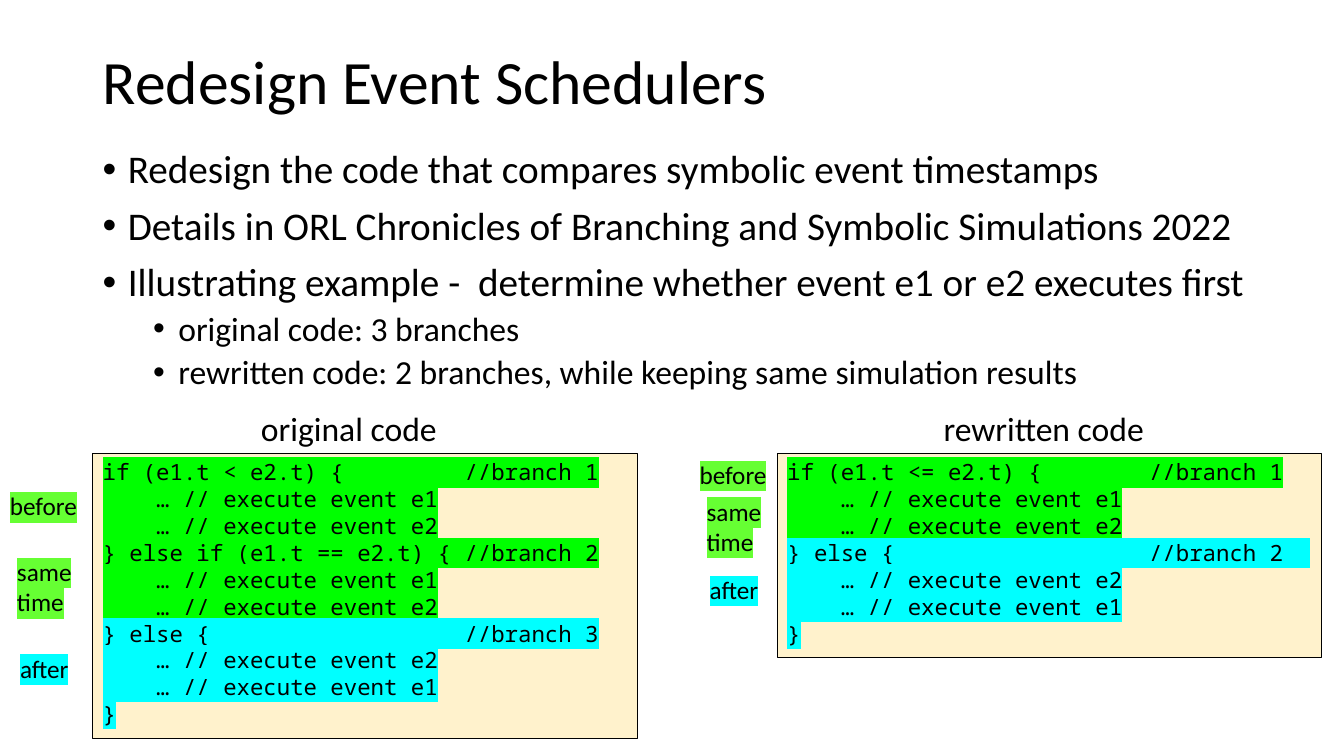
from dataclasses import dataclass

from lxml import etree
from pptx import Presentation
from pptx import util as u
from pptx.dml.color import RGBColor
from pptx.enum import shapes, text
from pptx.oxml import ns


@dataclass(frozen=True)
class Theme:
    ink: str = "000000"
    panel: str = "FFF2CC"
    green: str = "00FF00"
    lime: str = "66FF33"
    cyan: str = "00FFFF"
    sans: str = "Calibri"
    mono: str = "Noto Sans Mono"
    title: int = 44
    body: int = 28
    detail: int = 24
    label: int = 18
    code: int = 16
    outline: float = 0.75


THEME = Theme()
TITLE = "Redesign Event Schedulers"
BULLETS = [
    (0, "Redesign the code that compares symbolic event timestamps"),
    (0, "Details in ORL Chronicles of Branching and Symbolic Simulations 2022"),
    (0, "Illustrating example -  determine whether event e1 or e2 executes first"),
    (1, "original code: 3 branches"),
    (1, "rewritten code: 2 branches, while keeping same simulation results"),
]
BRANCH_COLUMN = 27
PANEL_TOP = 4.5
PANEL_WIDTH = 5.4


def place(box, left, top, width, height):
    box.left, box.top = u.Inches(left), u.Inches(top)
    box.width, box.height = u.Inches(width), u.Inches(height)


def write(para, words, size, font=THEME.sans, highlight=None):
    span = para.add_run()
    span.text = words
    span.font.size = u.Pt(size)
    span.font.color.rgb = RGBColor.from_string(THEME.ink)
    if highlight:
        mark = etree.SubElement(span.font._element, ns.qn("a:highlight"))
        etree.SubElement(mark, ns.qn("a:srgbClr"), val=highlight)
    span.font.name = font


def write_lines(frame, lines, size, **style):
    for index, (words, highlight) in enumerate(lines):
        para = frame.paragraphs[0] if index == 0 else frame.add_paragraph()
        para.alignment = text.PP_ALIGN.LEFT
        write(para, words, size, highlight=highlight, **style)


def add_title(page):
    box = page.shapes.title
    place(box, 0.92, 0.4, 11.5, 0.88)
    frame = box.text_frame
    frame.auto_size = text.MSO_AUTO_SIZE.NONE
    frame.vertical_anchor = text.MSO_ANCHOR.MIDDLE
    write_lines(frame, [(TITLE, None)], THEME.title)
    frame.paragraphs[0].line_spacing = 0.9


def add_bullet(para, level):
    para.level = level
    para.line_spacing = 0.9
    props = para._p.get_or_add_pPr()
    props.set("marL", str(u.Inches(0.25 + 0.5 * level)))
    props.set("indent", str(u.Inches(-0.25)))
    color = etree.SubElement(props, ns.qn("a:buClr"))
    etree.SubElement(color, ns.qn("a:srgbClr"), val=THEME.ink)
    etree.SubElement(props, ns.qn("a:buFont"), typeface="Arial")
    etree.SubElement(props, ns.qn("a:buChar"), char="•")


def add_bullets(page):
    box = page.shapes.add_textbox(0, 0, 0, 0)
    place(box, 0.92, 1.44, 12.02, 2.66)
    frame = box.text_frame
    frame.word_wrap = True
    for index, (level, words) in enumerate(BULLETS):
        para = frame.add_paragraph() if index else frame.paragraphs[0]
        if index:
            para.space_before = u.Pt(5 if level else 10)
        add_bullet(para, level)
        write(para, words, THEME.detail if level else THEME.body)


def add_label(page, lines, left, top, width, height, size, highlight=None):
    box = page.shapes.add_textbox(0, 0, 0, 0)
    place(box, left, top, width, height)
    box.text_frame.word_wrap = False
    write_lines(box.text_frame, [(line, highlight) for line in lines], size)


def branch(head, number, events, highlight, tail=""):
    first = f"{head:<{BRANCH_COLUMN}}//branch {number}{tail}"
    steps = [f"    … // execute event {event}" for event in events]
    return [(line, highlight) for line in [first, *steps]]


def add_code(page, left, height, lines):
    box = page.shapes.add_shape(shapes.MSO_SHAPE.RECTANGLE, 0, 0, 0, 0)
    place(box, left, PANEL_TOP, PANEL_WIDTH, height)
    box.shadow.inherit = False
    box.fill.solid()
    box.fill.fore_color.rgb = RGBColor.from_string(THEME.panel)
    box.line.color.rgb = RGBColor.from_string(THEME.ink)
    box.line.width = u.Pt(THEME.outline)
    frame = box.text_frame
    frame.word_wrap = True
    frame.vertical_anchor = text.MSO_ANCHOR.TOP
    write_lines(frame, [*lines, ("}", THEME.cyan)], THEME.code, font=THEME.mono)


def add_order_labels(page, left, before_top, same_top, after_top):
    for lines, shift, top, width, height, highlight in [
        (["before"], 0, before_top, 0.87, 0.4, THEME.lime),
        (["same", "time"], 0.07, same_top, 0.75, 0.71, THEME.lime),
        (["after"], 0.1, after_top, 0.69, 0.4, THEME.cyan),
    ]:
        add_label(page, lines, left + shift, top, width, height, THEME.label, highlight)


def main():
    deck = Presentation()
    deck.slide_width, deck.slide_height = u.Inches(13.33), u.Inches(7.5)
    page = deck.slides.add_slide(deck.slide_layouts[5])
    add_title(page)
    add_bullets(page)
    add_code(page, 0.92, 2.83, [
        *branch("if (e1.t < e2.t) {", 1, ["e1", "e2"], THEME.green),
        *branch("} else if (e1.t == e2.t) {", 2, ["e1", "e2"], THEME.green),
        *branch("} else {", 3, ["e2", "e1"], THEME.cyan),
    ])
    add_code(page, 7.71, 2.02, [
        *branch("if (e1.t <= e2.t) {", 1, ["e1", "e2"], THEME.green),
        *branch("} else {", 2, ["e2", "e1"], THEME.cyan, tail="  "),
    ])
    add_label(page, ["original code"], 2.49, 4, 1.96, 0.5, THEME.detail)
    add_label(page, ["rewritten code"], 9.26, 4, 2.21, 0.5, THEME.detail)
    add_order_labels(page, 0, 4.82, 5.47, 6.43)
    add_order_labels(page, 6.84, 4.51, 4.87, 5.65)
    deck.save("out.pptx")


if __name__ == "__main__":
    main()
